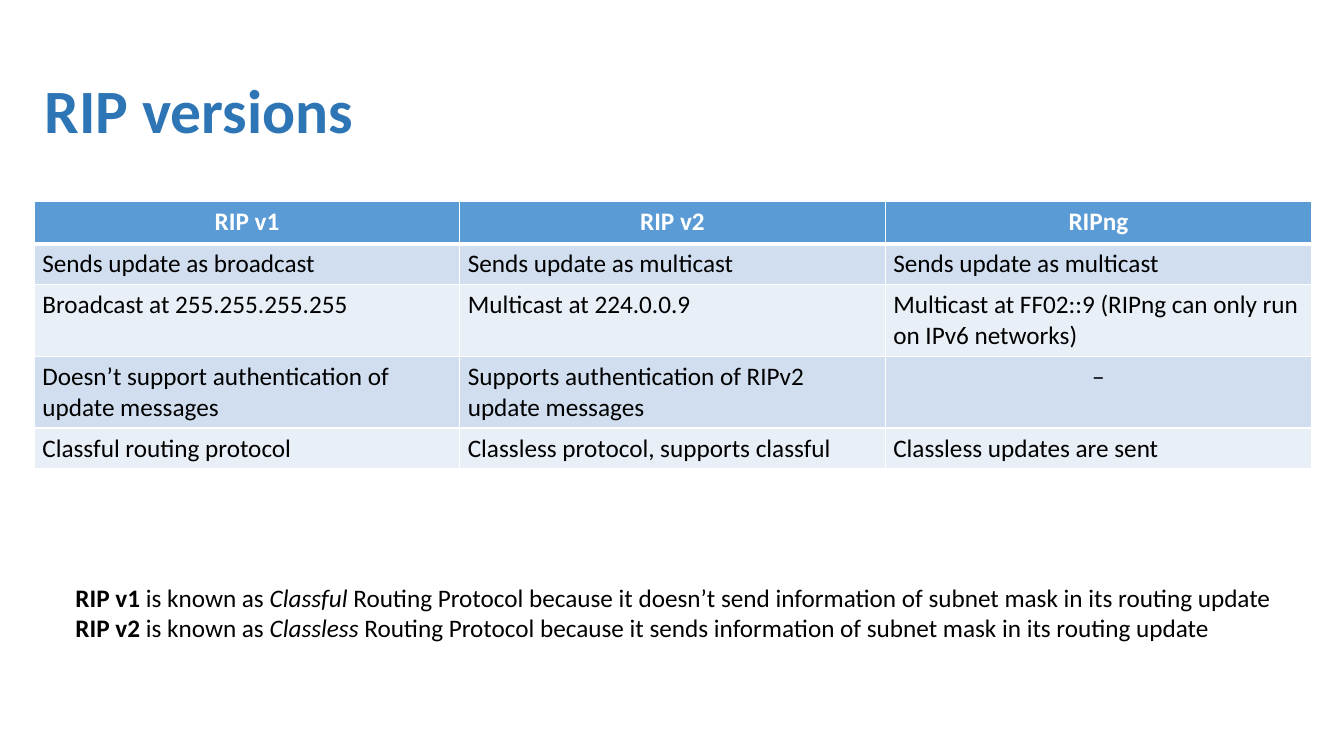
from dataclasses import dataclass

from lxml import etree
from pptx import Presentation
from pptx import util as u
from pptx.dml.color import RGBColor
from pptx.enum import text
from pptx.oxml.ns import qn

PX = 9144  # EMU per px, 100 px to the inch
FONT = "Calibri"
COLOURS = {
    "title": "2E75B6",
    "header": "5B9BD5",
    "band_dark": "D1DEEF",
    "band_light": "E9EFF7",
    "white": "FFFFFF",
    "black": "000000",
}


@dataclass(frozen=True)
class Area:
    left: int
    top: int
    width: int
    height: int

    def emu(self) -> tuple[int, ...]:
        return tuple(n * PX for n in (self.left, self.top, self.width, self.height))


@dataclass(frozen=True)
class Row:
    height: int
    fill: str
    cells: tuple[str, str, str]


@dataclass(frozen=True)
class Note:
    version: str
    before: str
    kind: str
    after: str


TITLE_AREA = Area(34, 40, 1268, 145)
TABLE_AREA = Area(34, 200, 1267, 203)
NOTE_AREA = Area(65, 573, 1206, 70)
COLUMNS = (422, 422, 423)

ROWS = (
    Row(42, "header", ("RIP v1", "RIP v2", "RIPng")),
    Row(35, "band_dark", ("Sends update as broadcast", "Sends update as multicast",
                          "Sends update as multicast")),
    Row(60, "band_light", ("Broadcast at 255.255.255.255", "Multicast at 224.0.0.9",
                           "Multicast at FF02::9 (RIPng can only run on IPv6 networks)")),
    Row(60, "band_dark", ("Doesn’t support authentication of update messages",
                          "Supports authentication of RIPv2 update messages", "–")),
    Row(35, "band_light", ("Classful routing protocol", "Classless protocol, supports classful",
                           "Classless updates are sent")),
)

NOTES = (
    Note("RIP v1", " is known as ", "Classful",
         " Routing Protocol because it doesn’t send information of subnet mask in its routing update"),
    Note("RIP v2", " is known as ", "Classless",
         " Routing Protocol because it sends information of subnet mask in its routing update"),
)


def add_text(para, words: str, *, size: int = 18, colour: str = "black",
             bold: bool = False, italic: bool = False) -> None:
    span = para.add_run()
    span.text = words
    span.font.name = FONT
    span.font.size = u.Pt(size)
    span.font.bold = bold
    span.font.italic = italic
    span.font.color.rgb = RGBColor.from_string(COLOURS[colour])


def set_borders(cell, **points: float) -> None:
    properties = cell._tc.get_or_add_tcPr()
    for side in ("L", "R", "T", "B"):
        line = etree.SubElement(properties, qn(f"a:ln{side}"),
                                w=str(int(u.Pt(points.get(side, 0.96)))))
        fill = etree.SubElement(line, qn("a:solidFill"))
        etree.SubElement(fill, qn("a:srgbClr"), val=COLOURS["white"])


def add_title(page, words: str) -> None:
    box = page.shapes.title
    box.left, box.top, box.width, box.height = TITLE_AREA.emu()
    frame = box.text_frame
    frame.vertical_anchor = text.MSO_ANCHOR.MIDDLE
    frame.auto_size = text.MSO_AUTO_SIZE.NONE
    para = frame.paragraphs[0]
    para.alignment = text.PP_ALIGN.LEFT
    para.line_spacing = 0.9
    add_text(para, words, size=44, colour="title", bold=True)


def add_versions_table(page) -> None:
    table = page.shapes.add_table(len(ROWS), len(COLUMNS), *TABLE_AREA.emu()).table
    table.first_row = table.horz_banding = False
    for column, width in zip(table.columns, COLUMNS):
        column.width = width * PX
    for index, row in enumerate(ROWS):
        header = index == 0
        table.rows[index].height = row.height * PX
        for cell, words in zip(table.rows[index].cells, row.cells):
            # Thick rule between the header and the first body row
            set_borders(cell, **({"B": 3} if header else {"T": 3} if index == 1 else {}))
            cell.fill.solid()
            cell.fill.fore_color.rgb = RGBColor.from_string(COLOURS[row.fill])
            cell.margin_left = cell.margin_right = 8 * PX
            cell.margin_top = cell.margin_bottom = 5 * PX
            para = cell.text_frame.paragraphs[0]
            centred = header or words == "–"
            para.alignment = text.PP_ALIGN.CENTER if centred else text.PP_ALIGN.LEFT
            add_text(para, words, colour="white" if header else "black", bold=header)


def add_notes(page) -> None:
    frame = page.shapes.add_textbox(*NOTE_AREA.emu()).text_frame
    frame.word_wrap = False
    frame.auto_size = text.MSO_AUTO_SIZE.SHAPE_TO_FIT_TEXT
    para = frame.paragraphs[0]
    for index, note in enumerate(NOTES):
        if index:
            para.add_line_break()
        add_text(para, note.version, bold=True)
        add_text(para, note.before)
        add_text(para, note.kind, italic=True)
        add_text(para, note.after)


def main() -> None:
    deck = Presentation()
    deck.slide_width, deck.slide_height = 1333 * PX, 750 * PX
    page = deck.slides.add_slide(deck.slide_layouts.get_by_name("Title Only"))
    add_title(page, "RIP versions")
    add_versions_table(page)
    add_notes(page)
    deck.save("out.pptx")


if __name__ == "__main__":
    main()
